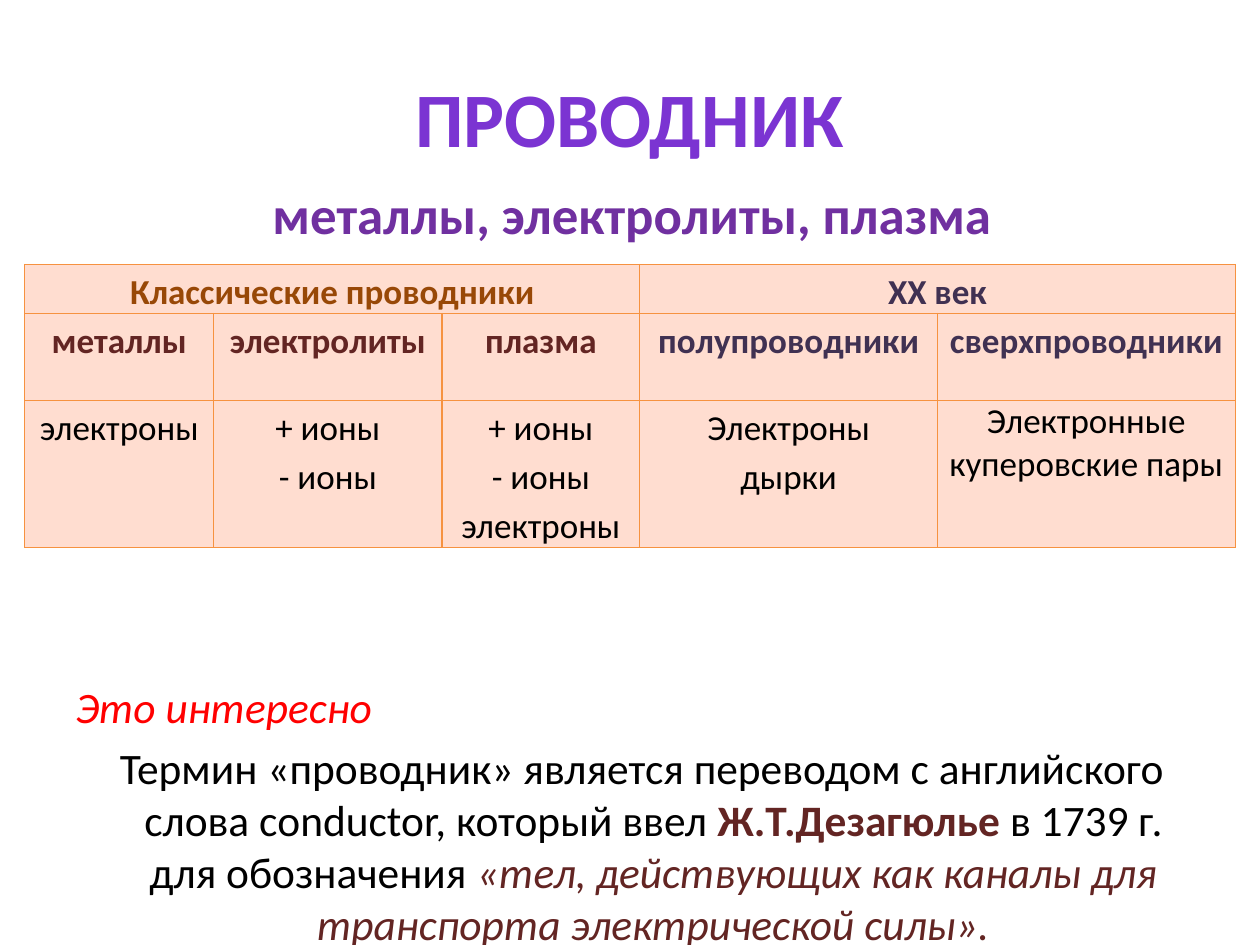
from lxml.etree import SubElement
from pptx import Presentation
from pptx.dml.color import RGBColor
from pptx.enum.text import MSO_ANCHOR, PP_ALIGN
from pptx.oxml.ns import qn
from pptx.util import Cm, Pt

FONT = "Calibri"
BLACK, RED, MAROON = "000000", "FF0000", "632523"
BROWN, PLUM = "984807", "403152"
CELL_FILL, BORDER = "FFDDD0", "F69240"

# Content: runs are (text, colour, bold, italic)
TITLE = [("ПРОВОДНИК", "7B34D2", True, False)]
SUBTITLE = [("металлы, электролиты, плазма", "7030A0", True, False)]
NOTE_HEAD = [("Это интересно", RED, False, True)]
NOTE = [
    ("Термин «проводник» является переводом с английского слова сonductor, "
     "который ввел ", BLACK, False, False),
    ("Ж.Т.Дезагюлье", MAROON, True, False),
    (" в 1739 г. для обозначения ", BLACK, False, False),
    ("«тел, действующих как каналы для транспорта электрической силы».",
     MAROON, False, True),
]
# Groups of conductors: (name, name colour, kind colour, {kind: carriers})
GROUPS = [
    ("Классические проводники", BROWN, MAROON, {
        "металлы": ["электроны"],
        "электролиты": ["+ ионы", "- ионы"],
        "плазма": ["+ ионы", "- ионы", "электроны"]}),
    ("ХХ век", PLUM, PLUM, {
        "полупроводники": ["Электроны", "дырки"],
        "сверхпроводники": ["Электронные куперовские пары"]}),
]
COL_WIDTHS = [3.81, 4.6, 3.99, 6.0, 6.0]
ROW_HEIGHTS = [0.99, 1.75, 2.97]


def rgb(value):
    return RGBColor.from_string(value)


def add_runs(p, runs, size, align=PP_ALIGN.CENTER):
    p.alignment = align
    for text, color, bold, italic in runs:
        r = p.add_run()
        r.text = text
        r.font.name, r.font.size = FONT, Pt(size)
        r.font.bold, r.font.italic = bold, italic
        r.font.color.rgb = rgb(color)


def add_box(left, top, width, height, anchor=MSO_ANCHOR.TOP):
    tf = s.shapes.add_textbox(Cm(left), Cm(top), Cm(width), Cm(height)).text_frame
    tf.word_wrap = True
    tf.vertical_anchor = anchor
    return tf


def style_cell(cell):
    cell.margin_left = cell.margin_right = Cm(0.18)
    cell.margin_top = cell.margin_bottom = 0
    tcPr = cell._tc.get_or_add_tcPr()
    for side in ("a:lnL", "a:lnR", "a:lnT", "a:lnB"):
        ln = SubElement(tcPr, qn(side), w=str(Pt(0.75)))
        SubElement(SubElement(ln, qn("a:solidFill")), qn("a:srgbClr"), val=BORDER)
    cell.fill.solid()
    cell.fill.fore_color.rgb = rgb(CELL_FILL)


def write_cell(cell, lines, color, bold, spacing=1.15):
    tf = cell.text_frame
    for i, line in enumerate(lines):
        p = tf.add_paragraph() if i else tf.paragraphs[0]
        p.line_spacing = spacing
        add_runs(p, [(line, color, bold, False)], 20)


prs = Presentation()
prs.slide_width, prs.slide_height = Cm(25.4), Cm(19.05)
s = prs.slides.add_slide(prs.slide_layouts[6])

# Title and subtitle
tf = add_box(1.27, 0.76, 22.86, 3.18, MSO_ANCHOR.MIDDLE)
add_runs(tf.paragraphs[0], TITLE, 44)
tf = add_box(1.32, 3.53, 22.86, 1.6)
add_runs(tf.paragraphs[0], SUBTITLE, 30.2)

# Table of conductors
table = s.shapes.add_table(
    len(ROW_HEIGHTS), len(COL_WIDTHS), Cm(0.5), Cm(5.33),
    Cm(sum(COL_WIDTHS)), Cm(sum(ROW_HEIGHTS))).table
table.first_row = table.horz_banding = False
for col, width in zip(table.columns, COL_WIDTHS):
    col.width = Cm(width)
for row, height in zip(table.rows, ROW_HEIGHTS):
    row.height = Cm(height)
for cell in table.iter_cells():
    style_cell(cell)

col = 0
for name, name_color, kind_color, kinds in GROUPS:
    head = table.cell(0, col)
    head.merge(table.cell(0, col + len(kinds) - 1))
    write_cell(head, [name], name_color, True)
    for kind, carriers in kinds.items():
        write_cell(table.cell(1, col), [kind], kind_color, True)
        # The last column wraps one phrase, set with single spacing
        spacing = 1.0 if col == len(COL_WIDTHS) - 1 else 1.15
        write_cell(table.cell(2, col), carriers, BLACK, False, spacing)
        col += 1

# Note on the origin of the term
tf = add_box(1.27, 13.59, 22.86, 5.4)
add_runs(tf.paragraphs[0], NOTE_HEAD, 24.8, PP_ALIGN.LEFT)
p = tf.add_paragraph()
pPr = p._p.get_or_add_pPr()
pPr.set("marL", str(Cm(0.95)))
pPr.set("indent", str(Cm(-0.45)))
p.space_before = Pt(5)
add_runs(p, NOTE, 24.8)

prs.save("out.pptx")
